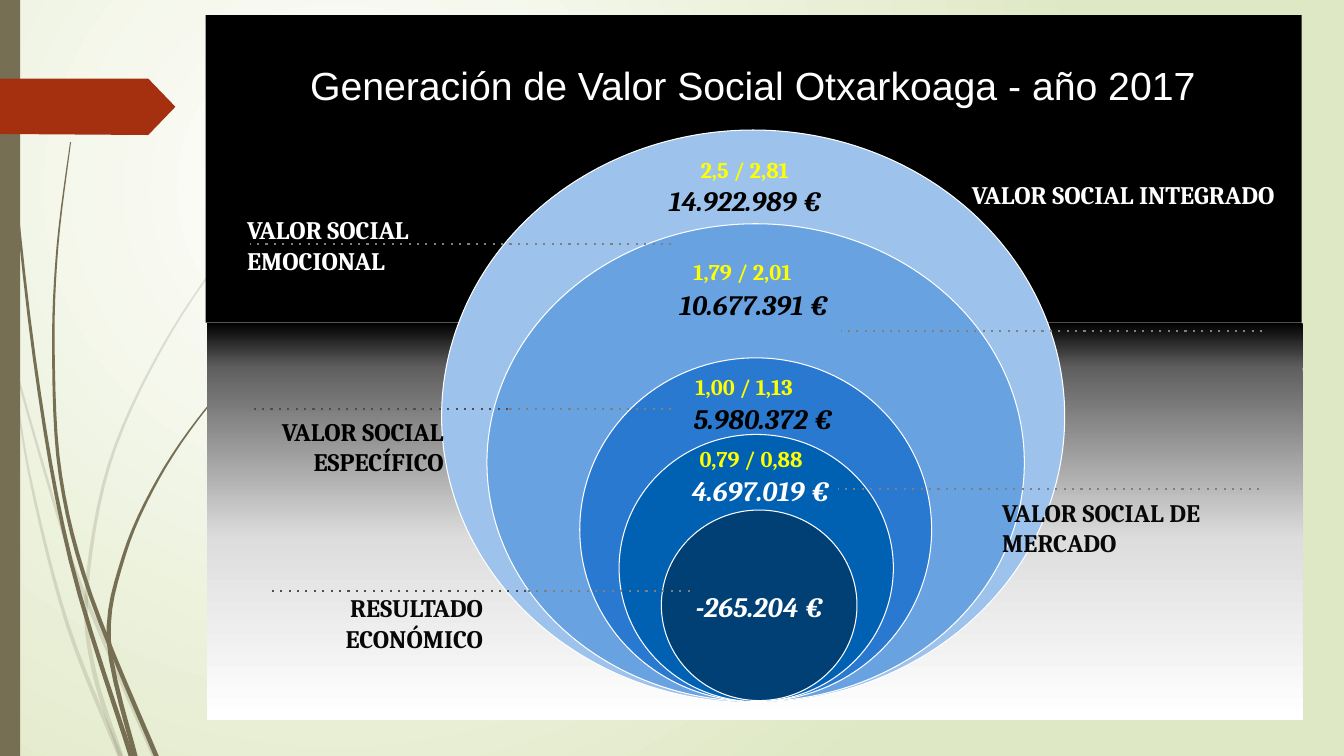
from dataclasses import dataclass

from lxml.etree import SubElement
from pptx import Presentation
from pptx.dml.color import RGBColor
from pptx.enum.dml import MSO_LINE
from pptx.enum.shapes import MSO_CONNECTOR, MSO_SHAPE
from pptx.enum.text import MSO_ANCHOR, PP_ALIGN
from pptx.oxml.ns import qn
from pptx.util import Inches, Pt

COLORS = {
    "white": "FFFFFF", "black": "000000", "ink": "080808", "yellow": "FFFF00",
    "pale_green": "DFE8C4", "olive": "766F54", "red": "A53010",
    "dark_gray": "5F5F5F", "light_gray": "DDDDDD", "leader": "7F7F7F", "leader_dark": "4D4D4D",
    "integrated": "9DC2EB", "emotional": "69A2E1", "specific": "2A79D0",
    "market": "0061B2", "economic": "004074",
}
LEFT, CENTER, RIGHT = PP_ALIGN.LEFT, PP_ALIGN.CENTER, PP_ALIGN.RIGHT
CURVE_STEPS = 6
TIP_WIDTH, ROOT_WIDTH = .01, .05


@dataclass
class Band:
    y: float
    h: float
    top: str
    bottom: str
    x: float = 2.05


@dataclass
class Circle:
    x: float
    y: float
    w: float
    h: float
    color: str


@dataclass
class Leader:
    x1: float
    x2: float
    y: float
    color: str = "leader"


@dataclass
class Label:
    text: str
    x: float
    y: float
    w: float
    h: float
    color: str = "black"
    size: int = 18
    align: PP_ALIGN = LEFT
    italic: bool = False
    padded: bool = False


# Centre lines of the grass blades, from tip to root
FAINT_BLADES = [
    [(0, 2.9), (.14, 3.6), (.6, 5.2), (.87, 5.98), (1.53, 7.5)],
    [(.11, 3.5), (.29, 4.7), (.67, 6.2), (1.19, 7.5)],
    [(3.12, 1.53), (2.28, 2.45), (1.59, 3.48), (1.08, 4.62), (.86, 5.85), (.93, 6.65), (1.2, 7.5)],
]
SOLID_BLADES = [
    [(.04, 0), (.08, 1.1), (.34, 3.55), (.7, 5.56), (1.3, 7.5)],
    [(.7, 1.41), (.57, 2.45), (.53, 3.49), (.6, 4.72), (.9, 5.91), (1.55, 7.5)],
    [(2.61, 3.44), (2.04, 4.06), (1.57, 4.75), (1.23, 5.51), (1.08, 6.36), (1.34, 7.5)],
]
TAG = [(0, .78), (1.47, .78), (1.74, 1.06), (1.47, 1.34), (0, 1.33)]
BANDS = [Band(.15, 3.05, "black", "black", 2.04), Band(3.64, 1.71, "dark_gray", "light_gray"),
         Band(3.2, .45, "black", "dark_gray"), Band(5.33, 1.81, "light_gray", "white")]
CIRCLES = [Circle(4.38, 1.29, 6.18, 5.68, "integrated"), Circle(4.83, 2.22, 5.33, 4.74, "emotional"),
           Circle(5.75, 3.55, 3.49, 3.41, "specific"), Circle(6.14, 4.31, 2.72, 2.65, "market"),
           Circle(6.56, 5.06, 1.94, 1.89, "economic")]
LEADERS = [Leader(6.66, 2.48, 2.42), Leader(12.52, 8.34, 3.28), Leader(12.49, 8.31, 4.85),
           Leader(6.66, 5.04, 4.06), Leader(5.04, 2.48, 4.06, "leader_dark"),
           Leader(6.84, 5.22, 5.86), Leader(5.22, 2.66, 5.86, "leader_dark")]
LABELS = [
    Label("14.922.989 €", 6.48, 1.82, 1.83, .34, "black", 20, CENTER, True),
    Label("10.677.391 €", 6.64, 2.85, 1.68, .74, "black", 20, CENTER, True),
    Label("5.980.372 €", 6.69, 3.98, 1.76, .31, "black", 20, CENTER, True),
    Label("4.697.019 €", 6.69, 4.65, 1.71, .46, "white", 20, CENTER, True, True),
    Label("-265.204 €", 6.71, 5.8, 1.65, .46, "white", 20, CENTER, True, True),
    Label("VALOR SOCIAL ESPECÍFICO", 2.38, 4.13, 2.02, .55, align=RIGHT),
    Label("VALOR SOCIAL INTEGRADO", 9.64, 1.78, 3.41, .5, "white"),
    Label("VALOR SOCIAL DE MERCADO", 9.94, 4.93, 2.69, .62, "ink"),
    Label("RESULTADO ECONÓMICO", 3.34, 5.88, 1.45, .62, "ink", align=RIGHT),
    Label("VALOR SOCIAL\nEMOCIONAL", 2.45, 2.13, 3.11, .32, "white"),
    Label("0,79 / 0,88", 6.84, 4.37, 1.67, .46, "yellow", 16, padded=True),
    Label("1,00 / 1,13", 6.8, 3.65, 1.8, .46, "yellow", 16, padded=True),
    Label("1,79 / 2,01", 6.78, 2.51, 1.94, .46, "yellow", 16, padded=True),
    Label("2,5 / 2,81", 6.85, 1.5, 1.8, .46, "yellow", 16, padded=True),
]


def rgb(name: str) -> RGBColor:
    return RGBColor.from_string(COLORS[name])


def set_gradient(fill, first: str, last: str) -> None:
    fill.gradient()
    for stop, name, pos in zip(fill.gradient_stops, (first, last), (0, 1)):
        stop.color.rgb, stop.position = rgb(name), pos


def set_background(s) -> None:
    set_gradient(s.background.fill, "white", "pale_green")
    lin = s._element.find(".//" + qn("a:lin"))
    grad = lin.getparent()
    grad.remove(lin)
    circle = SubElement(grad, qn("a:path"), {"path": "circle"})
    SubElement(circle, qn("a:fillToRect"), dict(l="50000", t="50000", r="100000", b="100000"))


def smooth_line(points: list) -> list:
    """Catmull-Rom curve through the points."""
    padded = [points[0], *points, points[-1]]
    out = [points[0]]
    for quad in zip(padded, padded[1:], padded[2:], padded[3:]):
        for t in (k / CURVE_STEPS for k in range(1, CURVE_STEPS + 1)):
            out.append(tuple(b + t * (c - a + t * (2 * a - 5 * b + 4 * c - d + t * (3 * (b - c) + d - a))) / 2
                             for a, b, c, d in zip(*quad)))
    return out


def blade_outline(points: list) -> list:
    line = smooth_line(points)
    sides = []
    for i, (x, y) in enumerate(line):
        half = (TIP_WIDTH + (ROOT_WIDTH - TIP_WIDTH) * i / (len(line) - 1)) / 2
        sides.append(((max(x - half, 0), y), (x + half, y)))
    return [left for left, _ in sides] + [right for _, right in reversed(sides)]


def paint(sp, color: str) -> None:
    sp.shadow.inherit = False
    sp.fill.solid()
    sp.fill.fore_color.rgb = rgb(color)
    sp.line.fill.background()


def add_outline(shapes, points: list, color: str, alpha: int = 100) -> None:
    (x, y), *rest = [(Inches(px), Inches(py)) for px, py in points]
    builder = shapes.build_freeform(x, y)
    builder.add_line_segments(rest)
    sp = builder.convert_to_shape()
    paint(sp, color)
    if alpha < 100:
        clr = sp._element.spPr.find(qn("a:solidFill")).find(qn("a:srgbClr"))
        SubElement(clr, qn("a:alpha"), val=str(alpha * 1000))


def add_box(s, kind: MSO_SHAPE, x: float, y: float, w: float, h: float, color: str):
    sp = s.shapes.add_shape(kind, Inches(x), Inches(y), Inches(w), Inches(h))
    paint(sp, color)
    return sp


def add_leader(s, leader: Leader) -> None:
    y = Inches(leader.y)
    c = s.shapes.add_connector(MSO_CONNECTOR.STRAIGHT, Inches(leader.x1), y, Inches(leader.x2), y)
    c.line.color.rgb, c.line.width = rgb(leader.color), Pt(1.5)
    c.line.dash_style = MSO_LINE.ROUND_DOT
    c._element.find(".//" + qn("a:prstDash")).set("val", "dot")
    SubElement(c._element.spPr, qn("a:effectLst"))


def add_label(s, label: Label, font: str = "Cambria", bold: bool = True):
    tf = s.shapes.add_textbox(Inches(label.x), Inches(label.y), Inches(label.w), Inches(label.h)).text_frame
    tf.word_wrap = True
    if not label.padded:
        tf.margin_left = tf.margin_right = tf.margin_top = tf.margin_bottom = 0
    tf.text = label.text
    for p in tf.paragraphs:
        p.alignment = label.align
        for r in p.runs:
            r.font.name, r.font.size, r.font.color.rgb = font, Pt(label.size), rgb(label.color)
            r.font.bold, r.font.italic = bold, label.italic
    return tf


def main() -> None:
    prs = Presentation()
    prs.slide_width, prs.slide_height = Inches(13.33), Inches(7.5)
    s = prs.slides.add_slide(prs.slide_layouts[6])

    # Background, grass and side tag
    set_background(s)
    for blades, alpha in ((FAINT_BLADES, 20), (SOLID_BLADES, 100)):
        for blade in blades:
            add_outline(s.shapes, blade_outline(blade), "olive", alpha)
    add_box(s, MSO_SHAPE.RECTANGLE, 0, 0, .2, 7.5, "olive")
    add_outline(s.shapes, TAG, "red")

    # Panel
    for band in BANDS:
        sp = add_box(s, MSO_SHAPE.RECTANGLE, band.x, band.y, 10.87, band.h, band.top)
        if band.top != band.bottom:
            set_gradient(sp.fill, band.top, band.bottom)
            sp.fill.gradient_angle = 270

    # Title
    title = Label("Generación de Valor Social Otxarkoaga - año 2017", 2.41, .29, 10.11, 1.1, "white", 28, CENTER)
    add_label(s, title, "Arial", False).vertical_anchor = MSO_ANCHOR.MIDDLE

    # Nested circles, leaders and labels
    for circle in CIRCLES:
        sp = add_box(s, MSO_SHAPE.OVAL, circle.x, circle.y, circle.w, circle.h, circle.color)
        sp.line.color.rgb, sp.line.width = rgb("white"), Pt(.75)
    for leader in LEADERS:
        add_leader(s, leader)
    for label in LABELS:
        add_label(s, label)

    prs.save("out.pptx")


if __name__ == "__main__":
    main()
